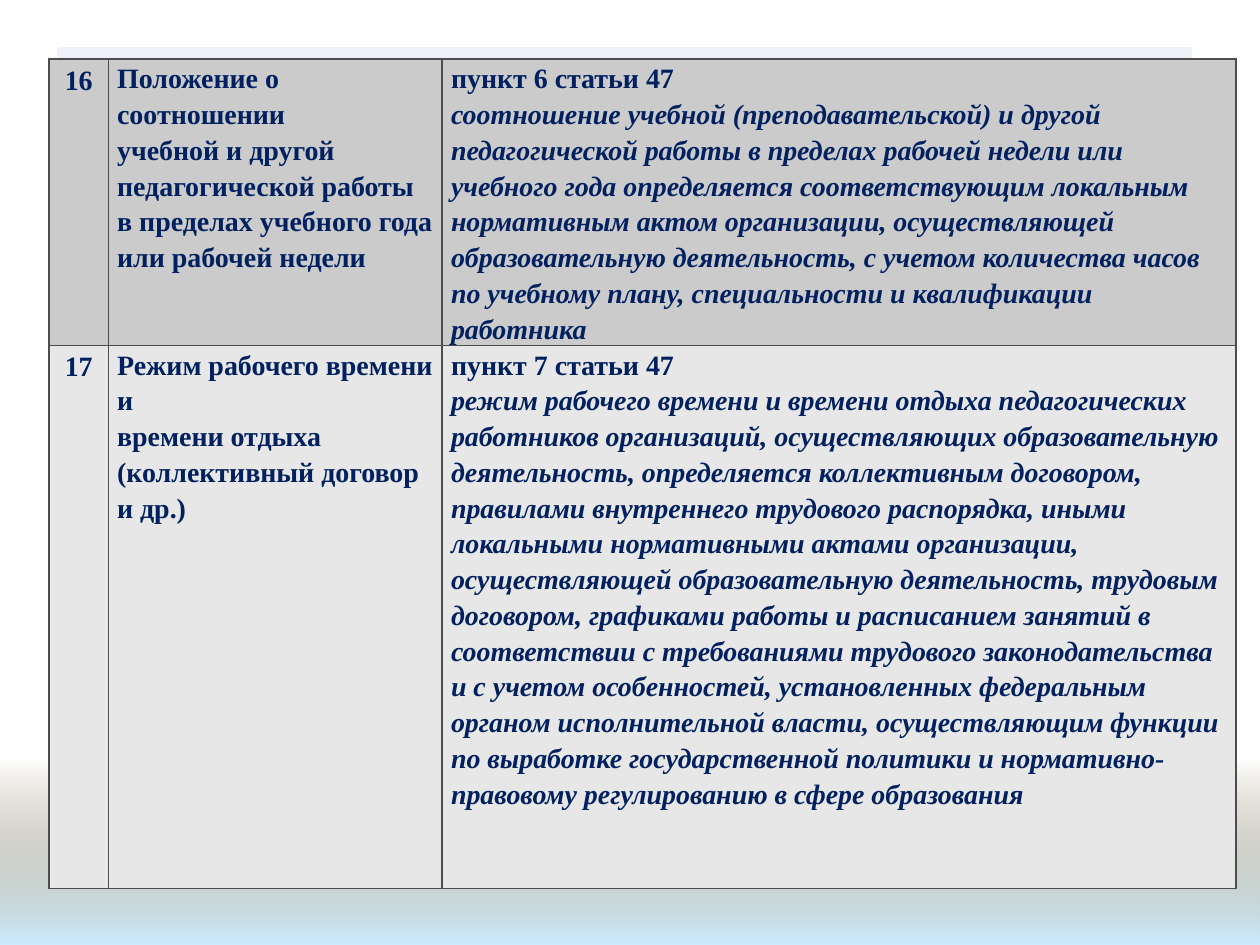
from lxml.etree import SubElement
from pptx import Presentation
from pptx.dml.color import RGBColor
from pptx.enum.shapes import MSO_SHAPE as Shape
from pptx.enum.text import PP_ALIGN as Align
from pptx.oxml.ns import qn
from pptx.util import Pt

FONT = "Times New Roman"
NAVY, GREY, PALE = "002060", "4D4D4D", "EEF1F9"
COLUMN_WIDTHS = [33.84, 190.8, 453.6]
ROW_HEIGHTS = [152.64, 310.32]
ROW_FILLS = ["CBCBCB", "E7E7E7"]
ROWS = [
    (
        ["16"],
        [
            "Положение о соотношении",
            "учебной и другой педагогической работы в пределах учебного года или рабочей недели",
        ],
        [
            "пункт 6 статьи 47",
            "соотношение учебной (преподавательской) и другой педагогической работы в пределах "
            "рабочей недели или учебного года определяется соответствующим локальным нормативным "
            "актом организации, осуществляющей образовательную деятельность, с учетом количества "
            "часов по учебному плану, специальности и квалификации работника",
        ],
    ),
    (
        ["17"],
        [
            "Режим рабочего времени и",
            "времени отдыха (коллективный договор и др.)",
        ],
        [
            "пункт 7 статьи 47",
            "режим рабочего времени и времени отдыха педагогических работников организаций, "
            "осуществляющих образовательную деятельность, определяется коллективным договором, "
            "правилами внутреннего трудового распорядка, иными локальными нормативными актами "
            "организации, осуществляющей образовательную деятельность, трудовым договором, "
            "графиками работы и расписанием занятий в соответствии с требованиями трудового "
            "законодательства и с учетом особенностей, установленных федеральным органом "
            "исполнительной власти, осуществляющим функции по выработке государственной политики "
            "и нормативно-правовому регулированию в сфере образования",
        ],
    ),
]


def color(value):
    """Turn a hex string into a colour."""
    return RGBColor.from_string(value)


class SlideBuilder:
    """Hold the text style and the current slide."""

    def __init__(self, slide, font, size, text_color):
        """Store the slide and its text style."""
        self.slide = slide
        self.font, self.size, self.text_color = font, size, text_color

    def box(self, kind, left, top, width, height):
        """Add a preset shape without a shadow."""
        shape = self.slide.shapes.add_shape(kind, Pt(left), Pt(top), Pt(width), Pt(height))
        shape.shadow.inherit = False
        return shape

    def panel(self, left, top, width, height, fill):
        """Add a panel with matching fill and line."""
        shape = self.box(Shape.FLOWCHART_PROCESS, left, top, width, height)
        shape.fill.solid()
        shape.fill.fore_color.rgb = color(fill)
        shape.line.color.rgb = color(fill)
        shape.line.width = Pt(2)

    def fade(self, left, top, width, height, start, end):
        """Add a band fading downwards from a transparent start colour."""
        shape = self.box(Shape.RECTANGLE, left, top, width, height)
        shape.line.fill.background()
        shape.fill.gradient()
        shape.fill.gradient_angle = 270
        for stop, value in zip(shape.fill.gradient_stops, (start, end)):
            stop.color.rgb = color(value)
        first_color = next(shape.element.iter(qn("a:srgbClr")))
        SubElement(first_color, qn("a:alpha"), val="0")

    def border(self, cell, value):
        """Draw a one-point line on all four sides of a cell."""
        properties = cell._tc.get_or_add_tcPr()
        for position, side in enumerate(("lnL", "lnR", "lnT", "lnB")):
            line = SubElement(properties, qn(f"a:{side}"), w=str(Pt(1)))
            fill = SubElement(line, qn("a:solidFill"))
            SubElement(fill, qn("a:srgbClr"), val=value)
            properties.insert(position, line)

    def cell(self, cell, lines, fill, is_number, is_reference):
        """Fill and format one table cell."""
        cell.fill.solid()
        cell.fill.fore_color.rgb = color(fill)
        self.border(cell, GREY)
        if not is_number:
            cell.margin_left = cell.margin_right = Pt(5.04)
            cell.margin_top = cell.margin_bottom = 0
        cell.text_frame.text = "\n".join(lines)
        for index, paragraph in enumerate(cell.text_frame.paragraphs):
            if is_number:
                paragraph.alignment = Align.CENTER
            else:
                paragraph.line_spacing = 1.15
            for run in paragraph.runs:
                run.font.name, run.font.size = self.font, Pt(self.size)
                run.font.bold = True
                run.font.italic = is_reference and index > 0
                run.font.color.rgb = color(self.text_color)

    def table(self, left, top, widths, heights, rows, fills):
        """Add the table of local regulations."""
        frame = self.slide.shapes.add_table(
            len(rows), len(widths), Pt(left), Pt(top), Pt(sum(widths)), Pt(sum(heights))
        )
        table = frame.table
        table.first_row = table.horz_banding = False
        for column, width in zip(table.columns, widths):
            column.width = Pt(width)
        for row, height, cells, fill in zip(table.rows, heights, rows, fills):
            row.height = Pt(height)
            for index, lines in enumerate(cells):
                self.cell(row.cells[index], lines, fill, index == 0, index == 2)


def main():
    """Build and save the slide."""
    presentation = Presentation()
    presentation.slide_width, presentation.slide_height = Pt(720), Pt(540)
    slide = presentation.slides.add_slide(presentation.slide_layouts[6])
    builder = SlideBuilder(slide, FONT, 16, NAVY)
    builder.fade(0, 434, 720, 106, "765E2F", "CCECFF")
    builder.panel(33.84, 28.08, 646.56, 478.08, PALE)
    builder.table(28.08, 33.84, COLUMN_WIDTHS, ROW_HEIGHTS, ROWS, ROW_FILLS)
    presentation.save("out.pptx")


if __name__ == "__main__":
    main()
